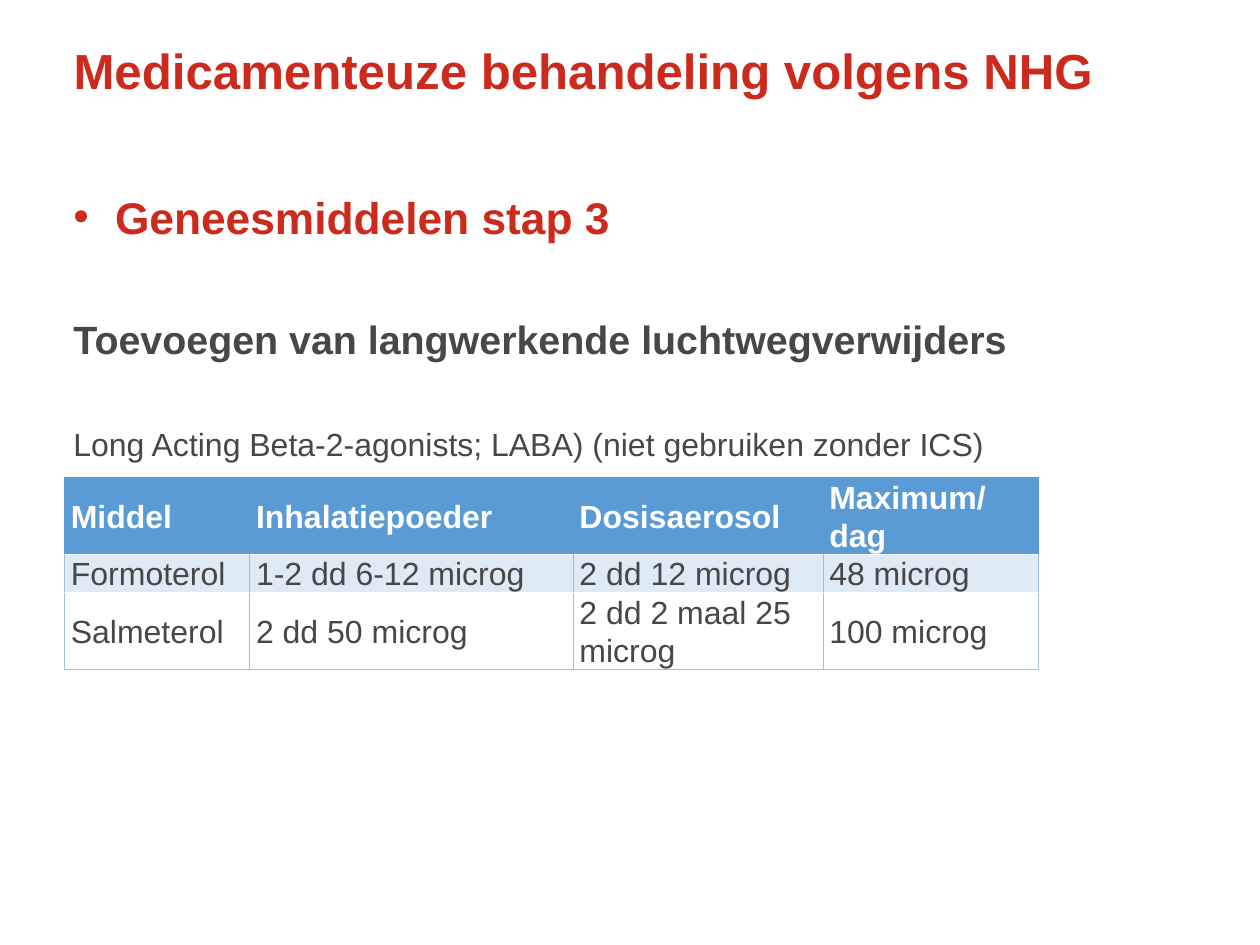
"""Build a slide on step 3 inhaler treatment with a dose table."""
from lxml.etree import SubElement as Sub
from pptx import Presentation
from pptx.dml.color import RGBColor
from pptx.enum.text import MSO_ANCHOR as Anchor, MSO_AUTO_SIZE as Fit, PP_ALIGN as Align
from pptx.oxml.ns import qn
from pptx.util import Inches, Pt

RED = RGBColor(0xCC, 0x2A, 0x1C)
GREY = RGBColor(0x47, 0x47, 0x47)
WHITE = RGBColor(0xFF, 0xFF, 0xFF)
BLUE = RGBColor(0x5B, 0x9B, 0xD5)
PALE = RGBColor(0xDE, 0xEA, 0xF6)
EDGE = RGBColor(0x9C, 0xC2, 0xE5)
LEFT, WIDTH = Inches(0.73), Inches(12.27)

DOSES = [
    ["Middel", "Inhalatiepoeder", "Dosisaerosol", "Maximum/dag"],
    ["Formoterol", "1-2 dd 6-12 microg", "2 dd 12 microg", "48 microg"],
    ["Salmeterol", "2 dd 50 microg", "2 dd 2 maal 25 microg", "100 microg"],
]
COLS = [2.09, 3.65, 2.82, 2.43]
ROWS = [0.85, 0.39, 0.85]
LOOKS = [(BLUE, WHITE, BLUE, "LRTB"), (PALE, GREY, EDGE, "LRB"), (None, GREY, EDGE, "LRB")]


def write(para, text, size=26, color=GREY, bold=False, before=0, lines=1.0, bullet=False):
    """Put formatted text in a paragraph."""
    para.alignment = Align.LEFT
    para.line_spacing = lines
    para.space_before = Pt(before)
    para.space_after = Pt(0)
    if bullet:
        props = para._p.get_or_add_pPr()
        props.set("marL", str(Inches(0.47)))
        props.set("indent", str(-Inches(0.47)))
        Sub(props, qn("a:buFont"), typeface="Arial")
        Sub(props, qn("a:buChar"), char="•")
    run = para.add_run()
    run.text = text
    font = run.font
    font.name, font.size, font.bold = "Arial", Pt(size), bold
    font.color.rgb = color


def frame(box, top):
    """Set the wrapping, anchor and insets of a text shape."""
    text = box.text_frame
    text.word_wrap = True
    text.auto_size = Fit.NONE
    text.vertical_anchor = Anchor.TOP
    text.margin_left = text.margin_right = Inches(0.1)
    text.margin_top = Inches(top)
    return text


def add_title(slide, text):
    """Place and fill the slide title."""
    box = slide.shapes.title
    box.left, box.top, box.width, box.height = LEFT, Inches(0.35), WIDTH, Inches(1.46)
    write(frame(box, 0.1).paragraphs[0], text, size=40, color=RED, bold=True)


def add_body(slide):
    """Add the three lines above the table."""
    box = slide.shapes.add_textbox(LEFT, Inches(2.04), WIDTH, Inches(3.3))
    text = frame(box, 0.1)
    write(text.paragraphs[0], "Geneesmiddelen stap 3", size=36, color=RED, bold=True, bullet=True)
    write(text.add_paragraph(), "Toevoegen van langwerkende luchtwegverwijders",
          size=32, bold=True, before=59)
    write(text.add_paragraph(),
          "Long Acting Beta-2-agonists; LABA) (niet gebruiken zonder ICS)", before=50)


def border(cell, color, sides):
    """Draw one-point borders on the given sides of a cell."""
    props = cell._tc.get_or_add_tcPr()
    for side in sides:
        line = Sub(props, qn(f"a:ln{side}"), w=str(Pt(1)))
        Sub(Sub(line, qn("a:solidFill")), qn("a:srgbClr"), val=str(color))


def add_cell(cell, text, look):
    """Fill and format one table cell."""
    fill, ink, edge, sides = look
    border(cell, edge, sides)
    if fill is None:
        cell.fill.background()
    else:
        cell.fill.solid()
        cell.fill.fore_color.rgb = fill
    cell.vertical_anchor = Anchor.MIDDLE
    cell.margin_left = cell.margin_right = Inches(0.07)
    cell.margin_top = cell.margin_bottom = 0
    write(cell.text_frame.paragraphs[0], text, color=ink, bold=ink == WHITE, lines=1.07)


def add_doses(slide):
    """Add the dose table."""
    table = slide.shapes.add_table(len(ROWS), len(COLS), LEFT, Inches(5.39),
                                   Inches(sum(COLS)), Inches(sum(ROWS))).table
    table.horz_banding = False
    for col, width in zip(table.columns, COLS):
        col.width = Inches(width)
    for row, height, texts, look in zip(table.rows, ROWS, DOSES, LOOKS):
        row.height = Inches(height)
        for cell, text in zip(row.cells, texts):
            add_cell(cell, text, look)


def main():
    """Build and save the slide."""
    deck = Presentation()
    deck.slide_width, deck.slide_height = Inches(14.22), Inches(10.66)
    slide = deck.slides.add_slide(deck.slide_layouts[5])
    add_title(slide, "Medicamenteuze behandeling volgens NHG")
    add_body(slide)
    add_doses(slide)
    deck.save("out.pptx")


if __name__ == "__main__":
    main()
